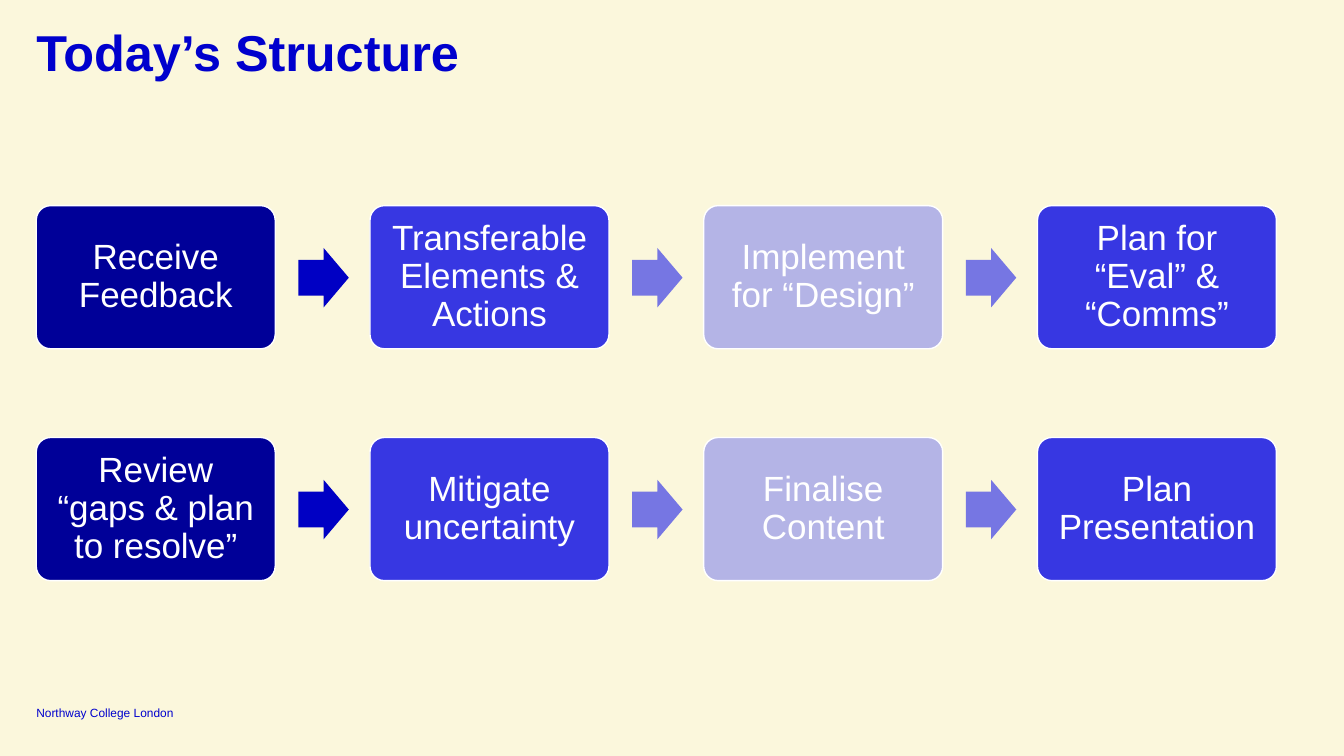
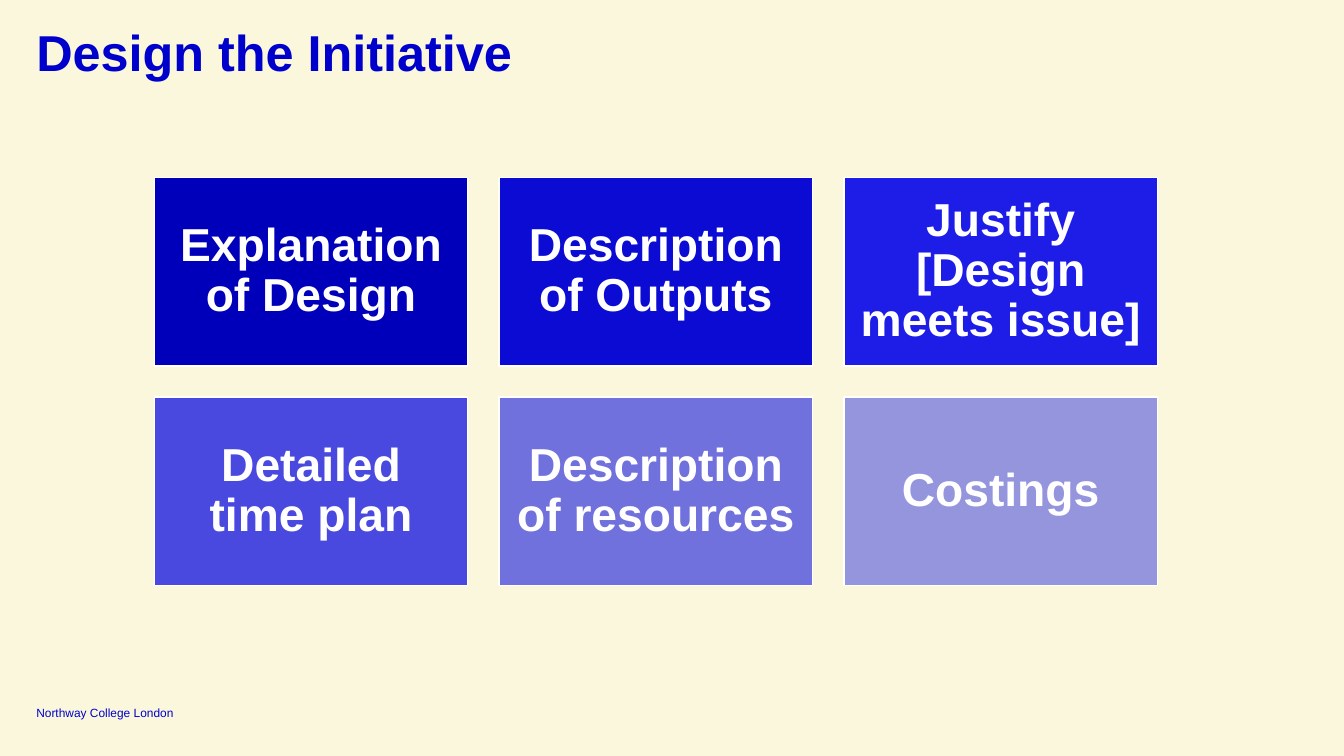
"""Build two slides: today's structure as two process rows, and a grid of design tasks."""
from dataclasses import dataclass

from pptx import Presentation
from pptx.dml.color import RGBColor
from pptx.enum.shapes import MSO_SHAPE
from pptx.enum.text import MSO_ANCHOR, MSO_AUTO_SIZE, PP_ALIGN
from pptx.presentation import Presentation as Deck
from pptx.shapes.autoshape import Shape
from pptx.slide import Slide
from pptx.text.text import TextFrame
from pptx.util import Inches, Pt

FONT = "Arial"
FOOTER = "Northway College London"
CREAM = RGBColor(0xFB, 0xF7, 0xDC)
BLUE = RGBColor(0x00, 0x00, 0xCD)
WHITE = RGBColor(0xFF, 0xFF, 0xFF)
NAVY = RGBColor(0x00, 0x00, 0x98)
ROYAL = RGBColor(0x37, 0x37, 0xE2)
LILAC = RGBColor(0xB4, 0xB4, 0xE6)
ARROW_DARK = RGBColor(0x00, 0x00, 0xC4)
ARROW_LIGHT = RGBColor(0x76, 0x76, 0xE3)

STEP_FILLS = (NAVY, ROYAL, LILAC, ROYAL)
ARROW_FILLS = (ARROW_DARK, ARROW_LIGHT, ARROW_LIGHT)
TASK_FILLS = (
    RGBColor(0x00, 0x00, 0xBA),
    RGBColor(0x0B, 0x0B, 0xD4),
    RGBColor(0x1D, 0x1D, 0xE7),
    RGBColor(0x49, 0x49, 0xE0),
    RGBColor(0x71, 0x71, 0xDD),
    RGBColor(0x95, 0x95, 0xDE),
)


@dataclass(frozen=True)
class BoxStyle:
    kind: MSO_SHAPE
    width: float
    height: float
    inset: float
    size: float
    bold: bool


@dataclass(frozen=True)
class Grid:
    left: float
    top: float
    dx: float
    dy: float

    def cell(self, col: int, row: int) -> tuple[float, float]:
        return self.left + col * self.dx, self.top + row * self.dy


STEP = BoxStyle(MSO_SHAPE.ROUNDED_RECTANGLE, 2.37, 1.42, 0.1, 25, False)
TASK = BoxStyle(MSO_SHAPE.RECTANGLE, 3.11, 1.87, 0.14, 33, True)
STEP_GRID = Grid(0.36, 2.04, 3.31, 2.3)
TASK_GRID = Grid(1.53, 1.76, 3.42, 2.18)

STEP_ROWS = (
    ("Receive Feedback", "Transferable Elements & Actions",
     "Implement for “Design”", "Plan for “Eval” & “Comms”"),
    ("Review “gaps & plan to resolve”", "Mitigate uncertainty",
     "Finalise Content", "Plan Presentation"),
)
TASKS = (
    "Explanation of Design", "Description of Outputs", "Justify [Design meets issue]",
    "Detailed time plan", "Description of resources", "Costings",
)


def set_text(tf: TextFrame, text: str, size: float, color: RGBColor, bold: bool,
             align: PP_ALIGN, anchor: MSO_ANCHOR, inset: float, spacing: float) -> None:
    tf.text = text
    tf.word_wrap = True
    tf.auto_size = MSO_AUTO_SIZE.NONE
    tf.vertical_anchor = anchor
    tf.margin_left = tf.margin_right = tf.margin_top = tf.margin_bottom = Inches(inset)
    p = tf.paragraphs[0]
    p.alignment = align
    p.line_spacing = spacing
    font = p.runs[0].font
    font.name, font.size, font.bold = FONT, Pt(size), bold
    font.color.rgb = color


def add_slide(prs: Deck, title: str) -> Slide:
    s = prs.slides.add_slide(prs.slide_layouts[5])
    sp = s.shapes.title
    sp.left, sp.top, sp.width, sp.height = map(Inches, (0.36, 0.28, 12.62, 0.41))
    set_text(sp.text_frame, title, 36, BLUE, True, PP_ALIGN.LEFT, MSO_ANCHOR.TOP, 0, 0.9)
    footer = s.shapes.add_textbox(*map(Inches, (0.36, 6.99, 1.55, 0.15)))
    set_text(footer.text_frame, FOOTER, 8.5, BLUE, False,
             PP_ALIGN.LEFT, MSO_ANCHOR.BOTTOM, 0, 1.0)
    return s


def add_filled(s: Slide, kind: MSO_SHAPE, x: float, y: float, w: float, h: float,
               fill: RGBColor) -> Shape:
    sp = s.shapes.add_shape(kind, *map(Inches, (x, y, w, h)))
    sp.shadow.inherit = False
    sp.fill.solid()
    sp.fill.fore_color.rgb = fill
    sp.line.fill.background()
    return sp


def add_box(s: Slide, style: BoxStyle, x: float, y: float, text: str, fill: RGBColor) -> None:
    sp = add_filled(s, style.kind, x, y, style.width, style.height, fill)
    sp.line.color.rgb = WHITE
    sp.line.width = Pt(1)
    if style.kind == MSO_SHAPE.ROUNDED_RECTANGLE:
        sp.adjustments[0] = 0.1
    set_text(sp.text_frame, text, style.size, WHITE, style.bold,
             PP_ALIGN.CENTER, MSO_ANCHOR.MIDDLE, style.inset, 0.9)


def add_arrow(s: Slide, x: float, y: float, fill: RGBColor) -> None:
    sp = add_filled(s, MSO_SHAPE.RIGHT_ARROW, x, y, 0.5, 0.59, fill)
    sp.adjustments[0] = 0.6
    sp.adjustments[1] = 0.5


def build_structure(prs: Deck) -> None:
    s = add_slide(prs, "Today’s Structure")
    for row, steps in enumerate(STEP_ROWS):
        for col, (text, fill) in enumerate(zip(steps, STEP_FILLS)):
            x, y = STEP_GRID.cell(col, row)
            add_box(s, STEP, x, y, text, fill)
            if col < len(ARROW_FILLS):
                add_arrow(s, x + 2.6, y + 0.42, ARROW_FILLS[col])


def build_design(prs: Deck) -> None:
    s = add_slide(prs, "Design the Initiative")
    for i, (text, fill) in enumerate(zip(TASKS, TASK_FILLS)):
        x, y = TASK_GRID.cell(i % 3, i // 3)
        add_box(s, TASK, x, y, text, fill)


def main() -> None:
    prs = Presentation()
    prs.slide_width, prs.slide_height = Inches(13.33), Inches(7.5)
    bg = prs.slide_master.background.fill
    bg.solid()
    bg.fore_color.rgb = CREAM
    build_structure(prs)
    build_design(prs)
    prs.save("out.pptx")


if __name__ == "__main__":
    main()
